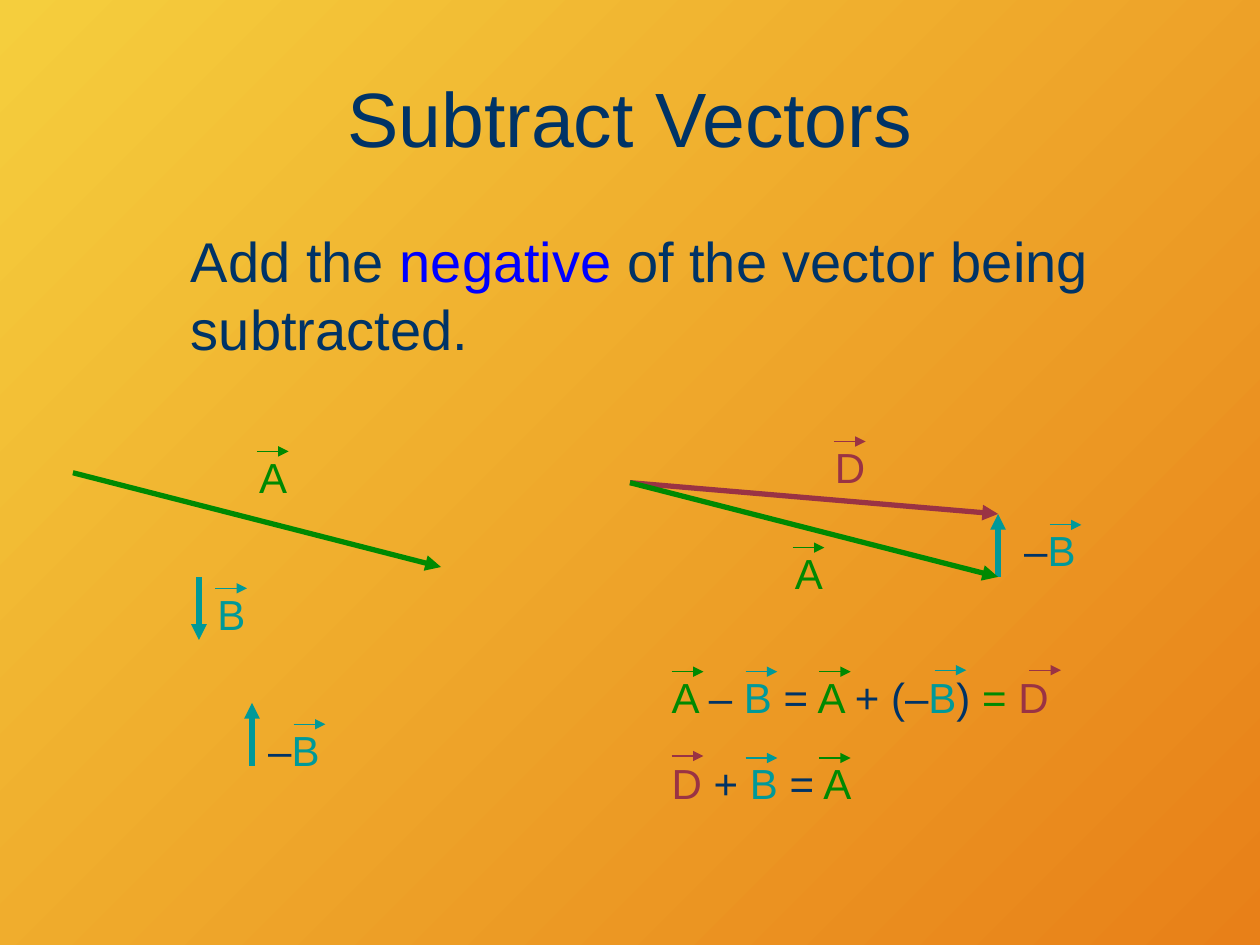
from dataclasses import dataclass

from lxml import etree
from pptx import Presentation
from pptx.dml.color import RGBColor
from pptx.enum.shapes import MSO_CONNECTOR
from pptx.enum.text import MSO_ANCHOR, PP_ALIGN
from pptx.oxml.ns import qn
from pptx.util import Cm, Pt

STRAIGHT = MSO_CONNECTOR.STRAIGHT
MIDDLE, TOP = MSO_ANCHOR.MIDDLE, MSO_ANCHOR.TOP
LEFT, CENTER = PP_ALIGN.LEFT, PP_ALIGN.CENTER

COLORS = {
    "navy": "003366",
    "blue": "0000FF",
    "A": "008901",
    "B": "009999",
    "D": "9A3344",
    "background start": "F5CE3D",
    "background end": "E88018",
}
FONT = "Arial"
SYMBOL_ARROW = 0.64  # length of the small arrow above a vector symbol, cm
LINE_HEIGHT = 1.02
NO_INSETS = dict.fromkeys(
    ("margin_left", "margin_right", "margin_top", "margin_bottom"), 0)


@dataclass
class Vector:
    color: str
    start: tuple[float, float]
    end: tuple[float, float]


@dataclass
class Label:
    symbol: str
    left: float
    top: float
    negative: bool = False


@dataclass
class Equation:
    top: float
    runs: list[tuple[str, str]]
    arrows: list[tuple[str, float, float]]  # symbol, offset right, offset down


VECTORS = [
    Vector("A", (1.47, 9.53), (8.89, 11.43)),
    Vector("B", (4.01, 11.63), (4.01, 12.9)),
    Vector("B", (5.08, 15.44), (5.08, 14.17)),
    Vector("D", (12.7, 9.73), (20.12, 10.36)),
    Vector("B", (20.12, 11.63), (20.12, 10.36)),
    Vector("A", (12.7, 9.73), (20.12, 11.63)),
]
LABELS = [
    Label("A", 5.08, 9.1),
    Label("B", 4.24, 11.86),
    Label("B", 5.08, 14.6, negative=True),
    Label("D", 16.71, 8.9),
    Label("B", 20.32, 10.58, negative=True),
    Label("A", 15.88, 11.04),
]
EQUATION_LEFT, EQUATION_WIDTH = 13.54, 8.69
EQUATIONS = [
    Equation(
        13.54,
        [("A ", "A"), ("– ", "navy"), ("B ", "B"), ("=", "navy"), (" A ", "A"),
         ("+ (–", "navy"), ("B", "B"), (")", "navy"), (" = ", "A"), ("D", "D")],
        [("A", 0, 0), ("B", 1.49, 0), ("A", 2.97, 0),
         ("B", 5.3, -0.03), ("D", 7.21, -0.03)],
    ),
    Equation(
        15.28,
        [("D ", "D"), ("+ ", "navy"), ("B ", "B"), ("=", "navy"), (" A", "A")],
        [("D", 0, -0.04), ("B", 1.49, 0), ("A", 2.97, 0)],
    ),
]


def color_of(name: str) -> RGBColor:
    return RGBColor.from_string(COLORS[name])


def place(shape, left: float, top: float, width: float, height: float) -> None:
    box = {"left": left, "top": top, "width": width, "height": height}
    for name, value in box.items():
        setattr(shape, name, Cm(value))


def write_runs(shape, runs: list[tuple[str, str]], size: float, alignment,
               anchor=TOP, space_before: float = 3, **frame_format) -> None:
    frame = shape.text_frame
    frame_values = {"word_wrap": True, "vertical_anchor": anchor, **frame_format}
    for name, value in frame_values.items():
        setattr(frame, name, value)
    paragraph = frame.paragraphs[0]
    paragraph.alignment = alignment
    paragraph.space_before = Pt(space_before)
    for text, color in runs:
        run = paragraph.add_run()
        run.text = text
        for name, value in {"name": FONT, "size": Pt(size)}.items():
            setattr(run.font, name, value)
        run.font.color.rgb = color_of(color)


def add_text(slide, box: tuple[float, float, float, float],
             runs: list[tuple[str, str]], size: float, alignment=LEFT,
             **frame_format) -> None:
    shape = slide.shapes.add_textbox(*(Cm(value) for value in box))
    write_runs(shape, runs, size, alignment, **frame_format)


def add_arrow(slide, vector: Vector, width: float) -> None:
    points = (*vector.start, *vector.end)
    connector = slide.shapes.add_connector(STRAIGHT, *(Cm(p) for p in points))
    connector.line.color.rgb = color_of(vector.color)
    connector.line.width = Pt(width)
    line = connector.line._get_or_add_ln()
    etree.SubElement(line, qn("a:tailEnd"), type="triangle")
    etree.SubElement(connector._element.spPr, qn("a:effectLst"))


def add_symbol_arrow(slide, symbol: str, left: float, top: float) -> None:
    add_arrow(slide, Vector(symbol, (left, top), (left + SYMBOL_ARROW, top)), 0.75)


def add_label(slide, label: Label) -> None:
    runs = [(label.symbol, label.symbol)]
    width, arrow_offset = 0.85, 0.1
    if label.negative:
        runs.insert(0, ("–", "navy"))
        width, arrow_offset = 1.69, 0.84
    add_text(slide, (label.left, label.top, width, LINE_HEIGHT), runs, 24,
             CENTER, **NO_INSETS)
    add_symbol_arrow(slide, label.symbol, label.left + arrow_offset, label.top)


def add_equation(slide, equation: Equation) -> None:
    box = (EQUATION_LEFT, equation.top, EQUATION_WIDTH, LINE_HEIGHT)
    add_text(slide, box, equation.runs, 24, **NO_INSETS)
    for symbol, right, down in equation.arrows:
        add_symbol_arrow(slide, symbol, EQUATION_LEFT + right, equation.top + down)


def main() -> None:
    presentation = Presentation()
    presentation.slide_width, presentation.slide_height = Cm(25.4), Cm(19.05)
    slide = presentation.slides.add_slide(presentation.slide_layouts[5])

    # Diagonal background; the angle is counted anticlockwise
    fill = slide.background.fill
    fill.gradient()
    fill.gradient_angle = 315
    for stop, name in zip(fill.gradient_stops, ("background start", "background end")):
        stop.color.rgb = color_of(name)

    # Title and rule
    title = slide.shapes.title
    place(title, 1.27, 0.76, 22.86, 3.18)
    write_runs(title, [("Subtract Vectors", "navy")], 44, CENTER, MIDDLE, 0)
    add_text(slide, (3.6, 4.45, 19.48, 3.38),
             [("Add the ", "navy"), ("negative", "blue"),
              (" of the vector being subtracted.", "navy")], 32)

    # Vector diagrams
    for vector in VECTORS:
        add_arrow(slide, vector, 3)
    for label in LABELS:
        add_label(slide, label)

    # Equations
    for equation in EQUATIONS:
        add_equation(slide, equation)

    presentation.save("out.pptx")


if __name__ == "__main__":
    main()
